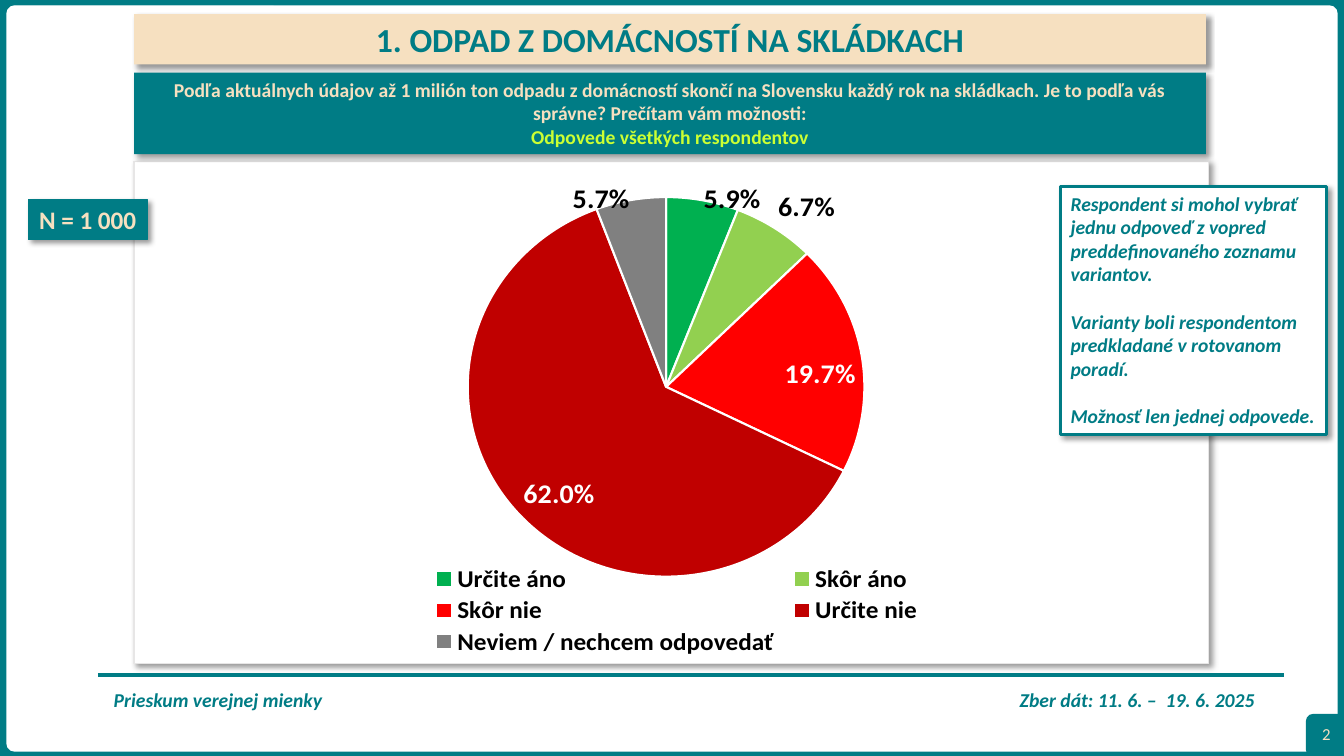
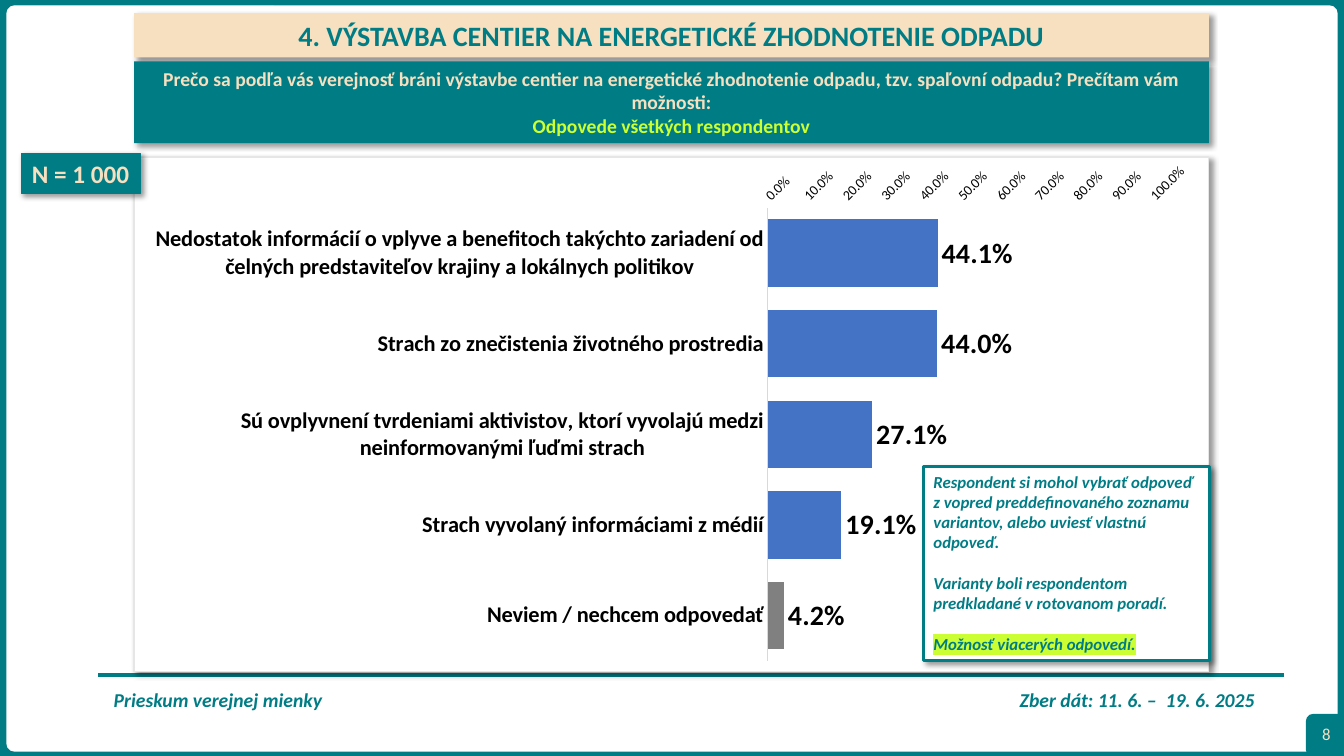
from dataclasses import dataclass

from lxml import etree
from pptx import Presentation
from pptx.chart.data import CategoryChartData
from pptx.dml.color import RGBColor
from pptx.enum.chart import XL_CHART_TYPE, XL_LABEL_POSITION, XL_LEGEND_POSITION, XL_TICK_MARK
from pptx.enum.shapes import MSO_CONNECTOR, MSO_SHAPE
from pptx.enum.text import MSO_ANCHOR, MSO_AUTO_SIZE, PP_ALIGN
from pptx.oxml import parse_xml
from pptx.oxml.ns import nsdecls, qn
from pptx.util import Inches, Pt


@dataclass(frozen=True)
class Theme:
    font: str = "Calibri"
    teal: str = "007C85"
    sand: str = "F6E0C0"
    lime: str = "CCFF33"
    white: str = "FFFFFF"
    black: str = "000000"
    panel_line: str = "E7E6E6"
    axis_line: str = "D9D9D9"
    bar: str = "4472C4"
    grey: str = "808080"
    greens: tuple = ("00B050", "92D050")
    reds: tuple = ("FF0000", "C00000")
    axis: int = 10
    number: int = 12
    body: int = 14
    category: int = 16
    large: int = 18
    value: int = 20
    title: int = 24


THEME = Theme()
LEFT, WIDTH = 1.33, 10.66
PERCENT = "0.0%"
RESPONDENTS = "Odpovede všetkých respondentov"
DONT_KNOW = "Neviem / nechcem odpovedať"
ROTATED = "Varianty boli respondentom predkladané v rotovanom poradí."


def rgb(color):
    return RGBColor.from_string(color)


def set_font(font, size, color, **fmt):
    font.color.rgb = rgb(color)
    for name, value in {"name": THEME.font, "size": Pt(size), **fmt}.items():
        setattr(font, name, value)


def add_shadow(sp):
    sp._element.spPr.append(parse_xml(
        f'<a:effectLst {nsdecls("a")}><a:outerShdw blurRad="50800" dist="38100" dir="2700000" '
        'algn="tl" rotWithShape="0"><a:srgbClr val="000000"><a:alpha val="40000"/></a:srgbClr>'
        '</a:outerShdw></a:effectLst>'))


def place(sp, box):
    for name, value in zip(("left", "top", "width", "height"), box):
        setattr(sp, name, Inches(value))


def set_layout(element, x, y, w, h, inner=False):
    """Give a plot area or legend a fixed place, as fractions of the chart."""
    for old in element.findall(qn("c:layout")):
        element.remove(old)
    target = '<c:layoutTarget val="inner"/>' if inner else ""
    values = "".join(f'<c:{k} val="{v}"/>' for k, v in zip("xywh", (x, y, w, h)))
    layout = parse_xml(
        f'<c:layout {nsdecls("c")}><c:manualLayout>{target}<c:xMode val="edge"/>'
        f'<c:yMode val="edge"/>{values}</c:manualLayout></c:layout>')
    position = element.find(qn("c:legendPos"))
    if position is None:
        element.insert(0, layout)
    else:
        position.addnext(layout)


class Deck:
    def __init__(self, theme):
        self.t = theme
        self.prs = Presentation()
        self.prs.slide_width, self.prs.slide_height = Inches(13.33), Inches(7.5)
        self.layout = self.prs.slide_layouts[5]
        self.s = None

    def set_lines(self, tf, lines, size, color, align=PP_ALIGN.LEFT, gap=0, **fmt):
        """Fill a frame with (text, format) lines; gap is the space between paragraphs."""
        tf.auto_size = MSO_AUTO_SIZE.NONE
        tf.word_wrap = True
        for i, (text, extra) in enumerate(lines):
            p = tf.paragraphs[0] if i == 0 else tf.add_paragraph()
            p.alignment = align
            p.space_before = Pt(gap if i else 0)
            r = p.add_run()
            r.text = text
            style = {"size": size, "color": color, **fmt, **extra}
            highlight = style.pop("highlight", None)
            set_font(r.font, **style)
            if highlight:
                mark = parse_xml(f'<a:highlight {nsdecls("a")}><a:srgbClr val="{highlight}"/></a:highlight>')
                r._r.rPr.find(qn("a:solidFill")).addnext(mark)

    def shape(self, box, fill, line=None, weight=1, shadow=True, kind=MSO_SHAPE.RECTANGLE):
        sp = self.s.shapes.add_shape(kind, *map(Inches, box))
        sp.fill.solid()
        sp.fill.fore_color.rgb = rgb(fill)
        if line:
            sp.line.color.rgb = rgb(line)
            sp.line.width = Pt(weight)
        else:
            sp.line.fill.background()
        if shadow:
            add_shadow(sp)
        else:
            sp.shadow.inherit = False
        sp.text_frame.vertical_anchor = MSO_ANCHOR.TOP
        return sp

    def text(self, box, lines, size, color, **fmt):
        sp = self.s.shapes.add_textbox(*map(Inches, box))
        self.set_lines(sp.text_frame, lines, size, color, **fmt)
        return sp

    def build_layout(self):
        """Draw the shared frame and footer, then hand them to the layout."""
        t = self.t
        self.layout.background.fill.solid()
        self.layout.background.fill.fore_color.rgb = rgb(t.teal)
        for ph in list(self.layout.placeholders):
            if ph.placeholder_format.idx:
                ph._element.getparent().remove(ph._element)
        page = self.shape((0.07, 0.06, 13.19, 7.39), t.white, t.white, shadow=False,
                          kind=MSO_SHAPE.ROUNDED_RECTANGLE)
        page.adjustments[0] = 0.01
        footer = self.text((1.03, 6.84, 11.77, 0.44),
                           [("Prieskum verejnej mienky\tZber dát: 11. 6. –  19. 6. 2025", {})],
                           t.body, t.teal, bold=True, italic=True)
        p = footer.text_frame.paragraphs[0]
        p.line_spacing = 0.7
        tabs = etree.SubElement(p._p.get_or_add_pPr(), qn("a:tabLst"))
        etree.SubElement(tabs, qn("a:tab"), pos=str(Inches(11.32)), algn="r")
        corner = self.shape((12.96, 7.09, 0.37, 0.41), t.teal, t.teal, shadow=False,
                            kind=MSO_SHAPE.ROUNDED_RECTANGLE)
        rule = self.s.shapes.add_connector(MSO_CONNECTOR.STRAIGHT, Inches(0.97), Inches(6.7),
                                           Inches(12.73), Inches(6.7))
        rule.line.color.rgb = rgb(t.teal)
        rule.line.width = Pt(3)
        etree.SubElement(rule._element.spPr, qn("a:effectLst"))
        for sp in (page, footer, corner, rule):
            self.layout.shapes._spTree.append(sp._element)

    def slide(self, title, box, size, number, panel):
        t = self.t
        first = self.s is None
        self.s = self.prs.slides.add_slide(self.layout)
        if first:
            self.build_layout()
        sp = self.s.shapes.title
        place(sp, box)
        sp.fill.solid()
        sp.fill.fore_color.rgb = rgb(t.sand)
        add_shadow(sp)
        sp.text_frame.vertical_anchor = MSO_ANCHOR.MIDDLE
        self.set_lines(sp.text_frame, [(title, {})], size, t.teal, PP_ALIGN.CENTER, bold=True)
        self.shape(panel, t.white, t.panel_line)
        page = self.text((12.9, 7.08, 0.51, 0.4), [(number, {})], t.number, t.sand,
                         align=PP_ALIGN.CENTER)
        page.text_frame.vertical_anchor = MSO_ANCHOR.MIDDLE

    def question(self, box, text):
        t = self.t
        sp = self.shape(box, t.teal)
        self.set_lines(sp.text_frame, [(text, {}), (RESPONDENTS, {"color": t.lime})],
                       t.body, t.sand, PP_ALIGN.CENTER, bold=True)

    def badge(self, left, top):
        t = self.t
        sp = self.shape((left, top, 1.18, 0.4), t.teal, t.teal, 0.75)
        self.set_lines(sp.text_frame, [("N = 1 000", {})], t.large, t.sand, PP_ALIGN.CENTER,
                       bold=True)
        sp.text_frame.word_wrap = False

    def note(self, box, lines, size):
        t = self.t
        sp = self.shape(box, t.white, t.teal, 2.25)
        self.set_lines(sp.text_frame, lines, size, t.teal, gap=1.22 * size, bold=True, italic=True)

    def chart(self, kind, box, answers, label_position, colors):
        """Add a one-series chart; colors maps point numbers to fills."""
        t = self.t
        data = CategoryChartData(number_format=PERCENT)
        data.categories = list(answers)
        data.add_series("Series 1", list(answers.values()))
        chart = self.s.shapes.add_chart(kind, *map(Inches, box), data).chart
        chart.has_title = chart.has_legend = False
        set_font(chart.font, t.body, t.black, bold=True)
        plot = chart.plots[0]
        plot.vary_by_categories = False
        plot.has_data_labels = True
        labels = plot.data_labels
        set_font(labels.font, t.value, t.black, bold=True)
        for name, value in {"show_value": True, "show_percentage": False, "position": label_position,
                            "number_format": PERCENT, "number_format_is_linked": False}.items():
            setattr(labels, name, value)
        for i, color in colors.items():
            fill = plot.series[0].points[i].format.fill
            fill.solid()
            fill.fore_color.rgb = rgb(color)
        return chart

    def pie(self, box, answers, colors, white_labels):
        t = self.t
        chart = self.chart(XL_CHART_TYPE.PIE, box, answers, XL_LABEL_POSITION.BEST_FIT,
                           dict(enumerate(colors)))
        chart.plots[0].vary_by_categories = True
        points = chart.plots[0].series[0].points
        for i in range(len(answers)):
            line = points[i].format.line
            line.color.rgb = rgb(t.white)
            line.width = Pt(1.5)
            label = points[i].data_label
            inside = i in white_labels
            set_font(label.font, t.value, t.white if inside else t.black, bold=True)
            label.position = (XL_LABEL_POSITION.INSIDE_END if inside
                              else XL_LABEL_POSITION.BEST_FIT)
        chart.has_legend = True
        legend = chart.legend
        legend.position = XL_LEGEND_POSITION.BOTTOM
        legend.include_in_layout = False
        set_font(legend.font, t.large, t.black, bold=True)
        set_layout(legend._element, 0.27, 0.79, 0.47, 0.2)
        set_layout(chart._chartSpace.chart.plotArea, 0.31, 0.03, 0.37, 0.79, inner=True)

    def bars(self, box, answers, colors):
        t = self.t
        chart = self.chart(XL_CHART_TYPE.BAR_CLUSTERED, box, answers,
                           XL_LABEL_POSITION.OUTSIDE_END, colors)
        plot = chart.plots[0]
        plot.gap_width = 34
        series = plot.series[0]
        series.invert_if_negative = False
        series.format.fill.solid()
        series.format.fill.fore_color.rgb = rgb(t.bar)
        cats, vals = chart.category_axis, chart.value_axis
        for axis, size, bold in ((cats, t.category, True), (vals, t.axis, False)):
            axis.major_tick_mark = axis.minor_tick_mark = XL_TICK_MARK.NONE
            axis.has_major_gridlines = False
            set_font(axis.tick_labels.font, size, t.black, bold=bold)
        cats.reverse_order = True
        cats.format.line.color.rgb = rgb(t.axis_line)
        cats.format.line.width = Pt(0.75)
        vals.format.line.fill.background()
        vals.minimum_scale, vals.maximum_scale, vals.major_unit = 0, 1, 0.1
        vals.tick_labels.number_format = PERCENT
        vals.tick_labels.number_format_is_linked = False
        vals._element.find(qn("c:txPr")).find(qn("a:bodyPr")).set("rot", "-2700000")


def main():
    t = THEME
    deck = Deck(t)

    panel = (LEFT, 1.6, WIDTH, 4.98)
    deck.slide("1. ODPAD Z DOMÁCNOSTÍ NA SKLÁDKACH", (LEFT, 0.14, 10.63, 0.5), t.title, "2", panel)
    deck.pie(panel, {"Určite áno": 0.059, "Skôr áno": 0.067, "Skôr nie": 0.197,
                     "Určite nie": 0.62, DONT_KNOW: 0.057},
             (*t.greens, *t.reds, t.grey), white_labels=(2, 3))
    deck.question((LEFT, 0.72, 10.63, 0.81),
                  "Podľa aktuálnych údajov až 1 milión ton odpadu z domácností skončí na Slovensku "
                  "každý rok na skládkach. Je to podľa vás správne? Prečítam vám možnosti:")
    deck.note((10.52, 1.85, 2.64, 2.46), [
        ("Respondent si mohol vybrať jednu odpoveď z vopred preddefinovaného zoznamu variantov.", {}),
        (ROTATED, {}), ("Možnosť len jednej odpovede.", {})], t.body)
    deck.badge(0.28, 1.98)

    deck.slide("4. VÝSTAVBA CENTIER NA ENERGETICKÉ ZHODNOTENIE ODPADU",
               (LEFT, 0.13, WIDTH, 0.44), t.value, "8", (LEFT, 1.56, WIDTH, 5.1))
    deck.bars((LEFT, 1.52, WIDTH, 5.14), {
        "Nedostatok informácií o vplyve a benefitoch takýchto zariadení od čelných "
        "predstaviteľov krajiny a lokálnych politikov": 0.441,
        "Strach zo znečistenia životného prostredia": 0.44,
        "Sú ovplyvnení tvrdeniami aktivistov, ktorí vyvolajú medzi neinformovanými "
        "ľuďmi strach": 0.271,
        "Strach vyvolaný informáciami z médií": 0.191,
        DONT_KNOW: 0.042}, {4: t.grey})
    deck.question((LEFT, 0.61, WIDTH, 0.81),
                  "Prečo sa podľa vás verejnosť bráni výstavbe centier na energetické zhodnotenie "
                  "odpadu, tzv. spaľovní odpadu? Prečítam vám možnosti:")
    deck.badge(0.21, 1.52)
    deck.note((9.16, 4.63, 2.84, 1.92), [
        ("Respondent si mohol vybrať odpoveď z vopred preddefinovaného zoznamu variantov, "
         "alebo uviesť vlastnú odpoveď.", {}),
        (ROTATED, {}), ("Možnosť viacerých odpovedí.", {"highlight": t.lime})], t.number)
    deck.prs.save("out.pptx")


if __name__ == "__main__":
    main()
